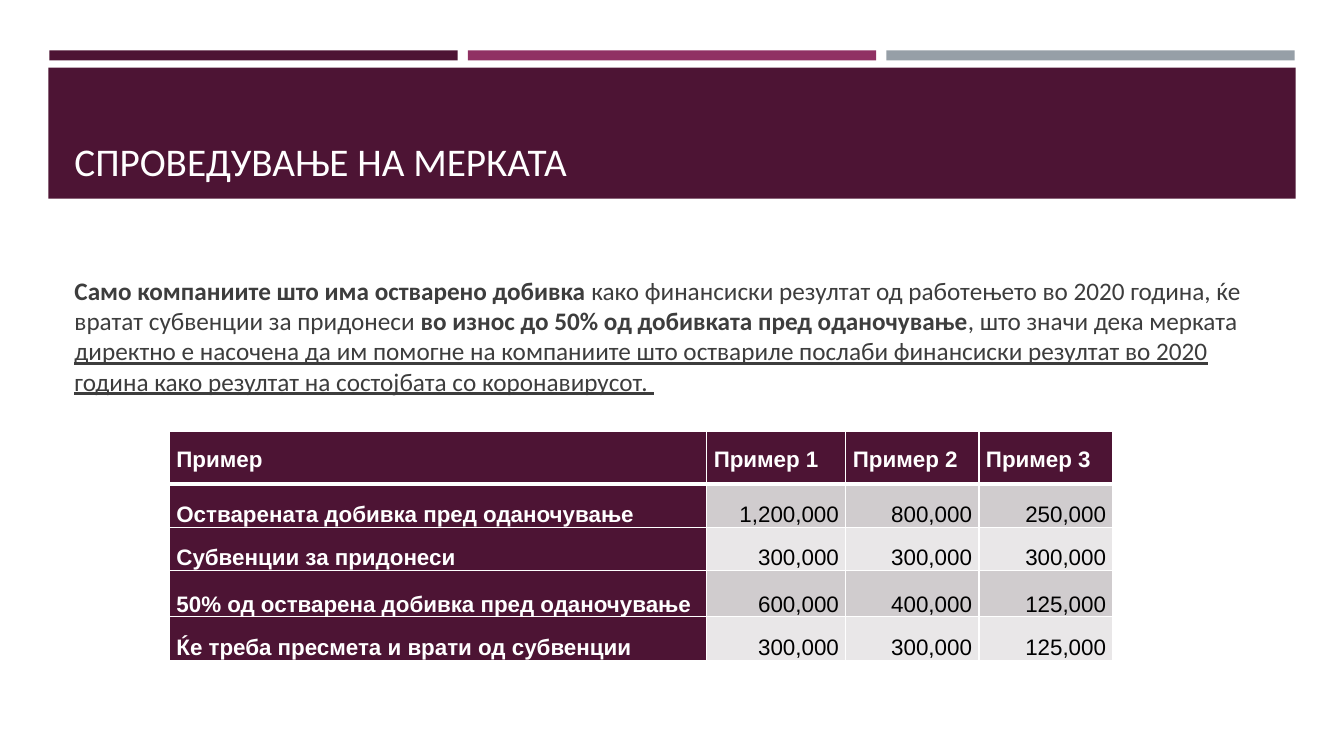
from lxml import etree
from pptx import Presentation
from pptx.dml.color import RGBColor
from pptx.enum import shapes, text
from pptx.oxml import ns
from pptx.util import Inches, Pt

COLORS = {
    "plum": "4D1434", "berry": "903163", "steel": "969FA7", "white": "FFFFFF",
    "ink": "3D3D3D", "black": "000000", "band": "D0CCCE", "pale": "E9E7E8",
}
TITLE = "СПРОВЕДУВАЊЕ НА МЕРКАТА"
BODY = [
    ("Само компаниите што има остварено добивка ", {"bold": True}),
    ("како финансиски резултат од работењето во 2020 година, ќе вратат "
     "субвенции за придонеси ", {}),
    ("во износ до 50% од добивката пред оданочување", {"bold": True}),
    (", што значи дека мерката ", {}),
    ("директно е насочена да им помогне на компаниите што оствариле послаби "
     "финансиски резултат во 2020 година како резултат на состојбата со "
     "коронавирусот. ", {"underline": True}),
]
ROWS = [
    ["Пример", "Пример 1", "Пример 2", "Пример 3"],
    ["Oстварената добивка пред оданочување", "1,200,000", "800,000", "250,000"],
    ["Субвенции за придонеси", "300,000", "300,000", "300,000"],
    ["50% од остварена добивка пред оданочување", "600,000", "400,000", "125,000"],
    ["Ќе треба пресмета и врати од субвенции", "300,000", "300,000", "125,000"],
]
COLUMN_WIDTHS = [5.33, 1.38, 1.32, 1.33]
ROW_HEIGHTS = [0.52, 0.43, 0.43, 0.46, 0.43]


def rgb(name):
    return RGBColor.from_string(COLORS[name])


def set_values(target, values):
    for name, value in values.items():
        setattr(target, name, value)


def add_span(para, words, color, **font):
    span = para.add_run()
    span.text = words
    set_values(span.font, font)
    span.font.color.rgb = rgb(color)


def add_bar(page, left, top, width, height, color):
    bar = page.shapes.add_shape(
        shapes.MSO_SHAPE.RECTANGLE, *map(Inches, (left, top, width, height)))
    bar.shadow.inherit = False
    bar.fill.solid()
    bar.fill.fore_color.rgb = rgb(color)
    bar.line.fill.background()


def add_text(page, left, top, width, height, spans, anchor, color, size, **spacing):
    box = page.shapes.add_textbox(*map(Inches, (left, top, width, height)))
    set_values(box.text_frame, {"word_wrap": True, "vertical_anchor": anchor})
    para = box.text_frame.paragraphs[0]
    set_values(para, spacing)
    for words, style in spans:
        add_span(para, words, color, name="Calibri", size=Pt(size), **style)


def add_borders(cell, widths):
    properties = cell._tc.get_or_add_tcPr()
    for side, width in widths.items():
        line = etree.SubElement(properties, ns.qn(f"a:ln{side}"), w=str(Pt(width)))
        fill = etree.SubElement(line, ns.qn("a:solidFill"))
        etree.SubElement(fill, ns.qn("a:srgbClr"), val=COLORS["white"])


def fill_cell(cell, words, row, column):
    header = row == 0
    label = header or column == 0
    add_borders(cell, {"L": 1, "R": 1, "T": 3 if row == 1 else 1, "B": 3 if header else 1})
    cell.fill.solid()
    cell.fill.fore_color.rgb = rgb("plum" if label else "band" if row % 2 else "pale")
    set_values(cell, {
        "margin_left": Inches(0.07), "margin_right": Inches(0.07),
        "margin_top": 0, "margin_bottom": 0,
        "vertical_anchor": text.MSO_ANCHOR.MIDDLE if header else text.MSO_ANCHOR.BOTTOM,
    })
    para = cell.text_frame.paragraphs[0]
    set_values(para, {
        "line_spacing": 1.15,
        "alignment": text.PP_ALIGN.LEFT if label else text.PP_ALIGN.RIGHT,
    })
    add_span(para, words, "white" if label else "black",
             name="Arial", size=Pt(16), bold=label)


def add_examples(page, left, top):
    table = page.shapes.add_table(
        len(ROWS), len(COLUMN_WIDTHS), Inches(left), Inches(top),
        Inches(sum(COLUMN_WIDTHS)), Inches(sum(ROW_HEIGHTS))).table
    for column, width in zip(table.columns, COLUMN_WIDTHS):
        column.width = Inches(width)
    for row, height in zip(table.rows, ROW_HEIGHTS):
        row.height = Inches(height)
    for row, entries in enumerate(ROWS):
        for column, words in enumerate(entries):
            fill_cell(table.cell(row, column), words, row, column)


def main():
    deck = Presentation()
    set_values(deck, {"slide_width": Inches(13.33), "slide_height": Inches(7.5)})
    page = deck.slides.add_slide(deck.slide_layouts[6])
    for index, color in enumerate(["plum", "berry", "steel"]):
        add_bar(page, 0.49 + index * 4.15, 0.5, 4.05, 0.1, color)
    add_bar(page, 0.48, 0.67, 12.37, 1.3, "plum")
    add_text(page, 0.64, 0.77, 12.06, 1.11, [(TITLE, {})],
             text.MSO_ANCHOR.BOTTOM, "white", 28)
    add_text(page, 0.64, 2.38, 12.06, 1.9, BODY, text.MSO_ANCHOR.MIDDLE, "ink", 18,
             space_before=Pt(3.6), space_after=Pt(6))
    add_examples(page, 1.68, 4.28)
    deck.save("out.pptx")


if __name__ == "__main__":
    main()
